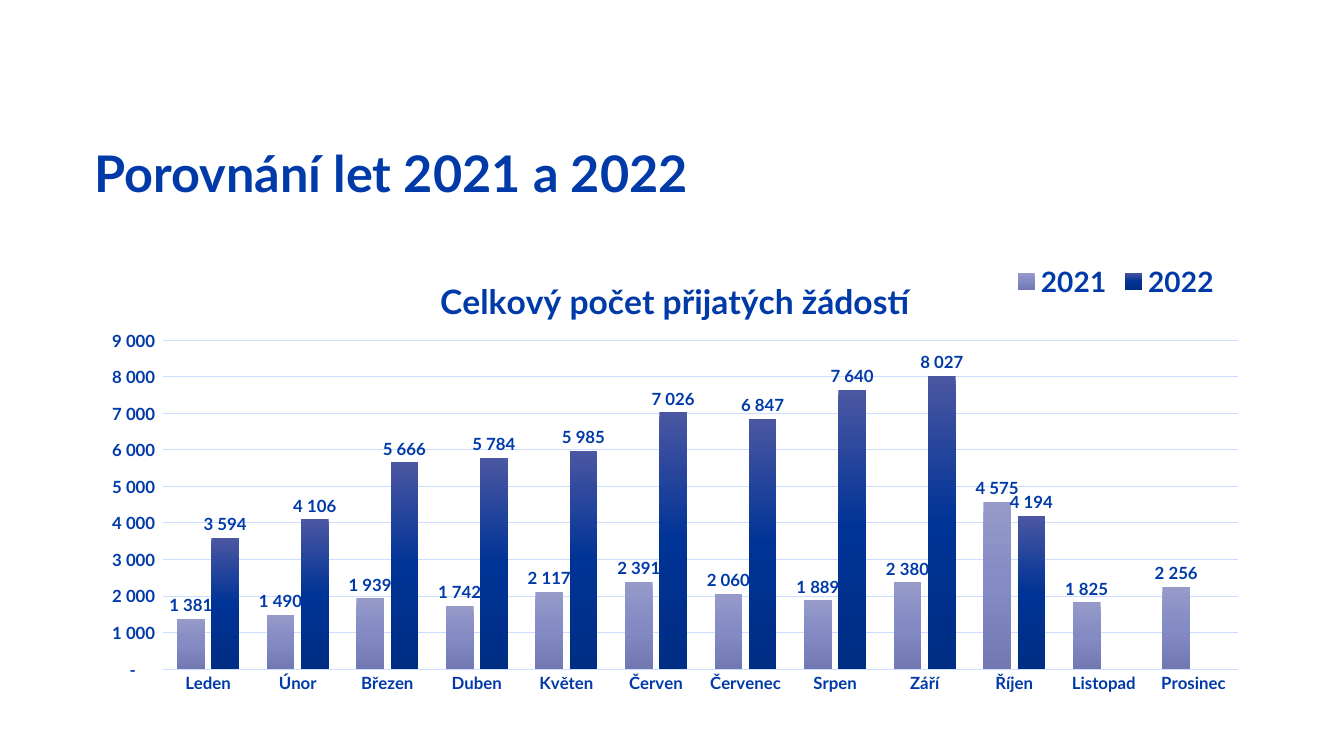
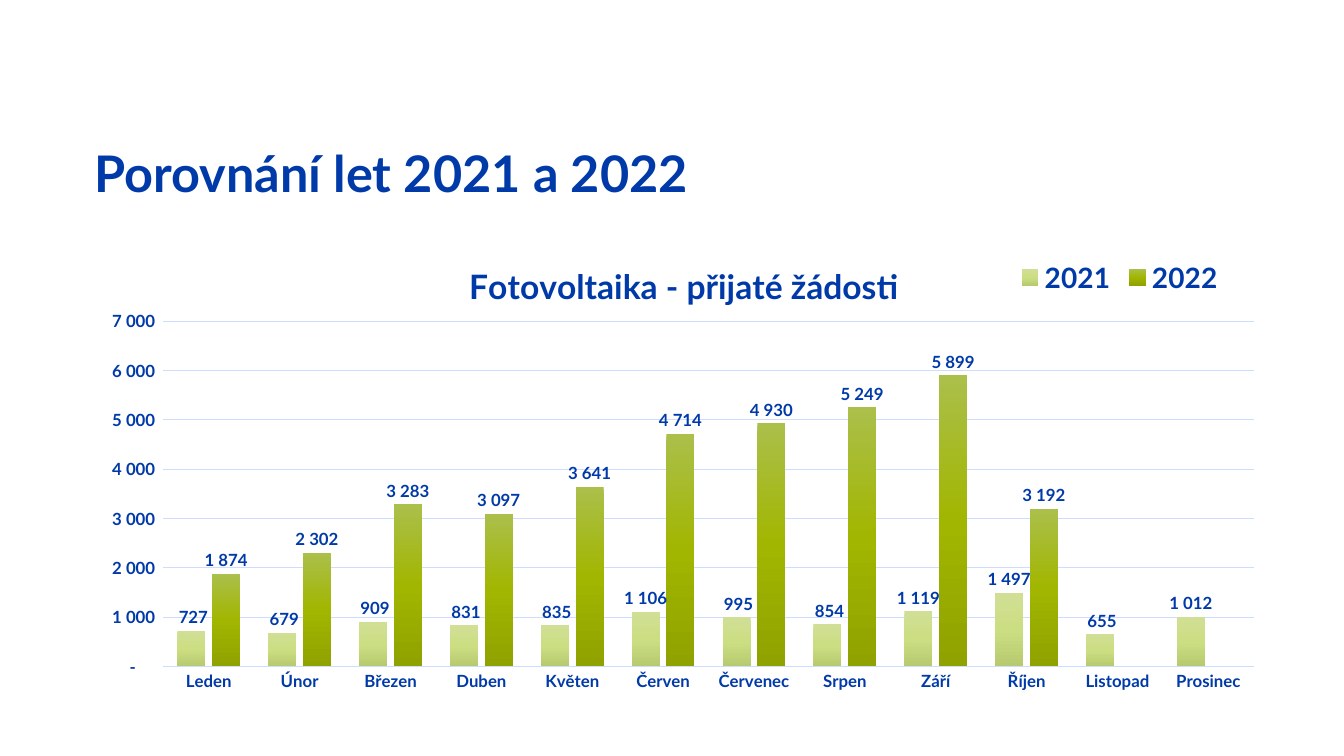
from dataclasses import dataclass

from pptx import Presentation
from pptx.chart.data import CategoryChartData
from pptx.dml.color import RGBColor
from pptx.enum.chart import XL_CHART_TYPE, XL_LABEL_POSITION, XL_LEGEND_POSITION, XL_TICK_MARK
from pptx.enum.text import MSO_ANCHOR, PP_ALIGN
from pptx.oxml import parse_xml
from pptx.oxml.ns import nsdecls, qn
from pptx.util import Cm, Pt

CLUSTERED = XL_CHART_TYPE.COLUMN_CLUSTERED
OUTSIDE_END = XL_LABEL_POSITION.OUTSIDE_END
LEGEND_BOTTOM = XL_LEGEND_POSITION.BOTTOM
NO_TICK = XL_TICK_MARK.NONE
MIDDLE = MSO_ANCHOR.MIDDLE
LEFT = PP_ALIGN.LEFT
TITLE_ONLY = 5


@dataclass(frozen=True)
class Theme:
    font: str = "Lato"
    text: str = "003AA9"
    grid: str = "CCDDFF"
    heading: int = 36
    chart_title: int = 24
    legend: int = 20
    label: int = 12
    hairline: float = 0.75


THEME = Theme()
HEADING = "Porovnání let 2021 a 2022"
MONTHS = ["Leden", "Únor", "Březen", "Duben", "Květen", "Červen", "Červenec",
          "Srpen", "Září", "Říjen", "Listopad", "Prosinec"]
COUNT_FORMAT = r'_-* #\ ##0_-;\-* #\ ##0_-;_-* "-"??_-;_-'

COMPARISONS = [
    {
        "title": "Celkový počet přijatých žádostí",
        "box": (2.13, 6.12, 29.67, 12.93),
        "maximum": 9000,
        "plot_at": {"x": 0.067, "y": 0.19, "w": 0.913, "h": 0.641},
        "title_at": {"x": 0.297, "y": 0.055},
        "legend_at": {"x": 0.785, "y": 0.03},
        "years": {
            "2021": [1381, 1490, 1939, 1742, 2117, 2391, 2060, 1889, 2380, 4575, 1825, 2256],
            "2022": [3594, 4106, 5666, 5784, 5985, 7026, 6847, 7640, 8027, 4194, None, None],
        },
        "gradients": [("959AC9", "848BC4", "7278B2"), ("4B57A2", "003396", "002E85")],
    },
    {
        "title": "Fotovoltaika - přijaté žádosti",
        "box": (2.13, 5.89, 30.1, 13.11),
        "maximum": 7000,
        "plot_at": {"x": 0.066, "y": 0.168, "w": 0.913, "h": 0.664},
        "title_at": {"x": 0.317, "y": 0.043},
        "legend_at": {"x": 0.777, "y": 0.04},
        "years": {
            "2021": [727, 679, 909, 831, 835, 1106, 995, 854, 1119, 1497, 655, 1012],
            "2022": [1874, 2302, 3283, 3097, 3641, 4714, 4930, 5249, 5899, 3192, None, None],
        },
        "gradients": [("D0DF95", "CCDE82", "B8CA6F"), ("ABBF4B", "A1B600", "8FA200")],
    },
]


def style_font(font, size):
    font.name = THEME.font
    font.size = Pt(size)
    font.bold = True
    font.color.rgb = RGBColor.from_string(THEME.text)


def style_line(line):
    line.color.rgb = RGBColor.from_string(THEME.grid)
    line.width = Pt(THEME.hairline)


def place_part(part, index, fractions):
    for old in part.findall(qn("c:layout")):
        part.remove(old)
    target = '<c:layoutTarget val="inner"/>' if "w" in fractions else ""
    modes = "".join(f'<c:{key}Mode val="edge"/>' for key in ("x", "y"))
    values = "".join(f'<c:{key} val="{value}"/>' for key, value in fractions.items())
    part.insert(index, parse_xml(
        f'<c:layout {nsdecls("c")}><c:manualLayout>{target}{modes}{values}'
        '</c:manualLayout></c:layout>'))


def fill_gradient(series, colours):
    stops = "".join(
        f'<a:gs pos="{index * 50000}"><a:srgbClr val="{colour}"/></a:gs>'
        for index, colour in enumerate(colours))
    series._element.get_or_add_spPr().append(parse_xml(
        f'<a:gradFill {nsdecls("a")} rotWithShape="1"><a:gsLst>{stops}</a:gsLst>'
        '<a:lin ang="5400000" scaled="0"/></a:gradFill>'))


def style_axes(chart, maximum):
    months, counts = chart.category_axis, chart.value_axis
    for axis in (months, counts):
        axis.major_tick_mark = axis.minor_tick_mark = NO_TICK
        style_font(axis.tick_labels.font, THEME.label)
    style_line(months.format.line)
    counts.format.line.fill.background()
    counts.has_major_gridlines = True
    style_line(counts.major_gridlines.format.line)
    counts.minimum_scale = 0
    counts.maximum_scale = maximum
    counts.major_unit = 1000
    counts.tick_labels.number_format = COUNT_FORMAT
    counts.tick_labels.number_format_is_linked = False


def style_columns(chart, gradients):
    plot = chart.plots[0]
    plot.gap_width = 100
    plot.overlap = -24
    plot.vary_by_categories = False
    for series, colours in zip(plot.series, gradients):
        series.invert_if_negative = False
        fill_gradient(series, colours)
        labels = series.data_labels
        labels.show_value = True
        labels.position = OUTSIDE_END
        labels.number_format = COUNT_FORMAT
        labels.number_format_is_linked = False
        style_font(labels.font, THEME.label)


def add_comparison_chart(slide, comparison):
    data = CategoryChartData(number_format=COUNT_FORMAT)
    data.categories = MONTHS
    for year, counts in comparison["years"].items():
        data.add_series(year, counts)
    box = [Cm(length) for length in comparison["box"]]
    chart = slide.shapes.add_chart(CLUSTERED, *box, data).chart
    style_font(chart.font, THEME.label)

    chart.has_title = True
    caption = chart.chart_title.text_frame
    caption.text = comparison["title"]
    style_font(caption.paragraphs[0].runs[0].font, THEME.chart_title)
    chart.has_legend = True
    chart.legend.position = LEGEND_BOTTOM
    chart.legend.include_in_layout = False
    style_font(chart.legend.font, THEME.legend)

    style_axes(chart, comparison["maximum"])
    style_columns(chart, comparison["gradients"])
    place_part(chart.plots[0]._element.getparent(), 0, comparison["plot_at"])
    place_part(chart.chart_title._element, 1, comparison["title_at"])
    place_part(chart.legend._element, 1, comparison["legend_at"])


def set_heading(slide):
    heading = slide.shapes.title
    heading.left, heading.top = Cm(2.13), Cm(3.25)
    heading.width, heading.height = Cm(17.32), Cm(2.18)
    frame = heading.text_frame
    frame.text = HEADING
    frame.vertical_anchor = MIDDLE
    paragraph = frame.paragraphs[0]
    paragraph.alignment = LEFT
    style_font(paragraph.runs[0].font, THEME.heading)


def main():
    deck = Presentation()
    deck.slide_width, deck.slide_height = Cm(33.87), Cm(19.05)
    for comparison in COMPARISONS:
        slide = deck.slides.add_slide(deck.slide_layouts[TITLE_ONLY])
        set_heading(slide)
        add_comparison_chart(slide, comparison)
    deck.save("out.pptx")


if __name__ == "__main__":
    main()
